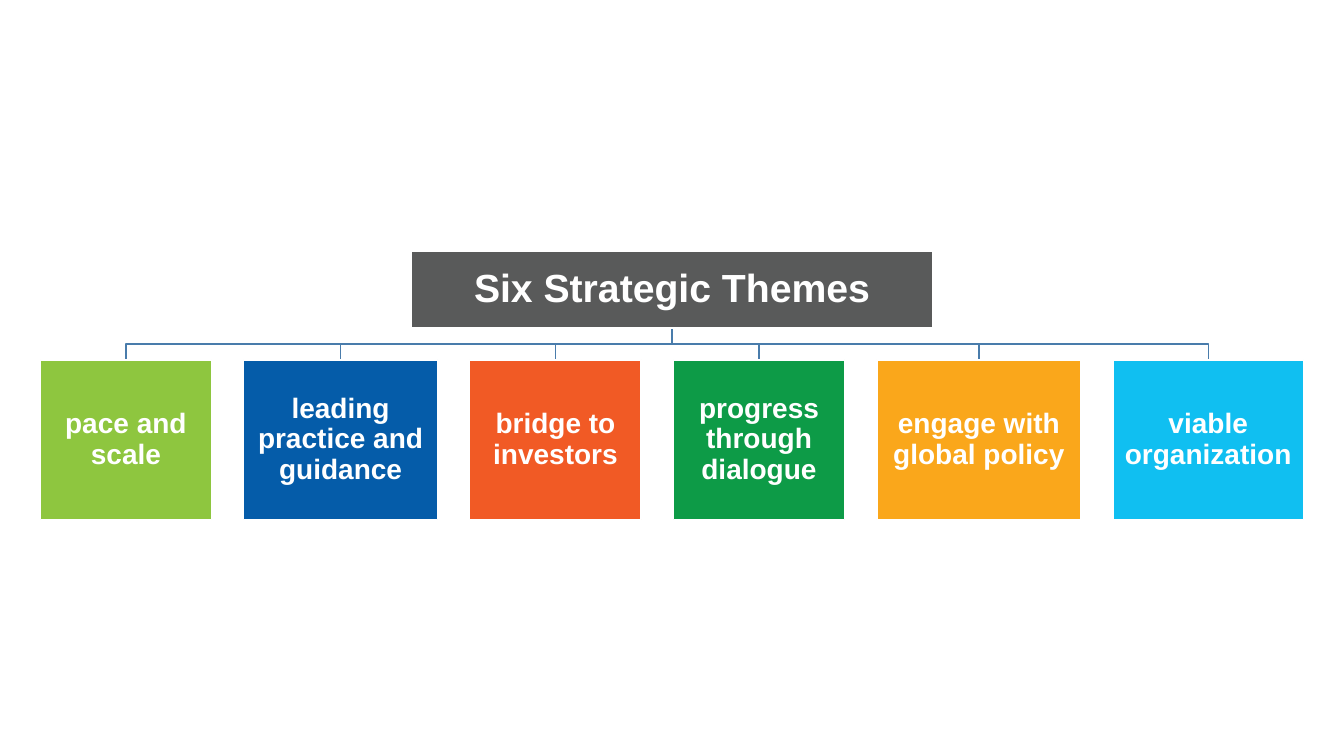
from dataclasses import dataclass

from pptx import Presentation
from pptx import util as u
from pptx.dml.color import RGBColor
from pptx.enum import shapes, text
from pptx.shapes.autoshape import Shape
from pptx.slide import Slide

WHITE = RGBColor(0xFF, 0xFF, 0xFF)
GRAY = RGBColor(0x59, 0x5A, 0x5A)
STEEL = RGBColor(0x49, 0x7C, 0xAB)
LIME = RGBColor(0x8E, 0xC6, 0x3F)
BLUE = RGBColor(0x05, 0x5C, 0xA9)
ORANGE = RGBColor(0xF1, 0x5A, 0x25)
GREEN = RGBColor(0x0D, 0x9B, 0x47)
AMBER = RGBColor(0xFA, 0xA7, 0x1B)
CYAN = RGBColor(0x10, 0xBF, 0xF1)

FONT = "Arial"
THEME_LEFT, THEME_TOP, THEME_HEIGHT = u.Cm(1.02), u.Cm(9.07), u.Cm(4.03)
GAP = u.Cm(0.81)
BUS_Y = u.Cm(8.67)


@dataclass(frozen=True)
class Theme:
    label: str
    width: u.Length
    color: RGBColor


THEMES = [
    Theme("pace and scale", u.Cm(4.31), LIME),
    Theme("leading practice and guidance", u.Cm(4.89), BLUE),
    Theme("bridge to investors", u.Cm(4.32), ORANGE),
    Theme("progress through dialogue", u.Cm(4.32), GREEN),
    Theme("engage with global policy", u.Cm(5.14), AMBER),
    Theme("viable organization", u.Cm(4.8), CYAN),
]


def format_box(sp: Shape, label: str, color: RGBColor, size: int, inset: u.Length) -> None:
    """Fill a box and centre its bold white label."""
    sp.fill.solid()
    sp.fill.fore_color.rgb = color
    sp.line.color.rgb = WHITE
    sp.line.width = u.Pt(1)
    tf = sp.text_frame
    tf.word_wrap = True
    tf.auto_size = text.MSO_AUTO_SIZE.NONE
    tf.vertical_anchor = text.MSO_ANCHOR.MIDDLE
    tf.margin_left = tf.margin_right = tf.margin_top = tf.margin_bottom = inset
    p = tf.paragraphs[0]
    p.alignment = text.PP_ALIGN.CENTER
    p.line_spacing = 0.9
    p.space_before = u.Pt(0)
    r = p.add_run()
    r.text = label
    r.font.name = FONT
    r.font.size = u.Pt(size)
    r.font.bold = True
    r.font.color.rgb = WHITE


def add_theme(s: Slide, theme: Theme, left: int) -> Shape:
    sp = s.shapes.add_shape(
        shapes.MSO_SHAPE.RECTANGLE, left, THEME_TOP, theme.width, THEME_HEIGHT
    )
    sp.shadow.inherit = False
    format_box(sp, theme.label, theme.color, 20, u.Cm(0.03))
    return sp


def center_x(sp: Shape) -> int:
    return sp.left + sp.width // 2


def add_branch(s: Slide, title: Shape, box: Shape) -> None:
    """Draw the bent line from the title to a theme, behind the boxes."""
    start_x, end_x = center_x(title), center_x(box)
    outline = s.shapes.build_freeform(start_x, title.top + title.height)
    outline.add_line_segments(
        [(start_x, BUS_Y), (end_x, BUS_Y), (end_x, box.top)], close=False
    )
    sp = outline.convert_to_shape()
    sp.shadow.inherit = False
    sp.fill.background()
    sp.line.color.rgb = STEEL
    sp.line.width = u.Pt(1)
    sp.element.getparent().insert(2, sp.element)


def main() -> None:
    prs = Presentation()
    prs.slide_width, prs.slide_height = u.Cm(33.87), u.Cm(19.05)
    s = prs.slides.add_slide(prs.slide_layouts[5])

    # Title box
    title = s.shapes.title
    title.left, title.top = u.Cm(10.36), u.Cm(6.33)
    title.width, title.height = u.Cm(13.15), u.Cm(1.94)
    format_box(title, "Six Strategic Themes", GRAY, 28, u.Cm(0.05))

    # Row of themes
    boxes = []
    left = THEME_LEFT
    for theme in THEMES:
        boxes.append(add_theme(s, theme, left))
        left += theme.width + GAP

    # Tree lines
    for box in boxes:
        add_branch(s, title, box)

    prs.save("out.pptx")


if __name__ == "__main__":
    main()
